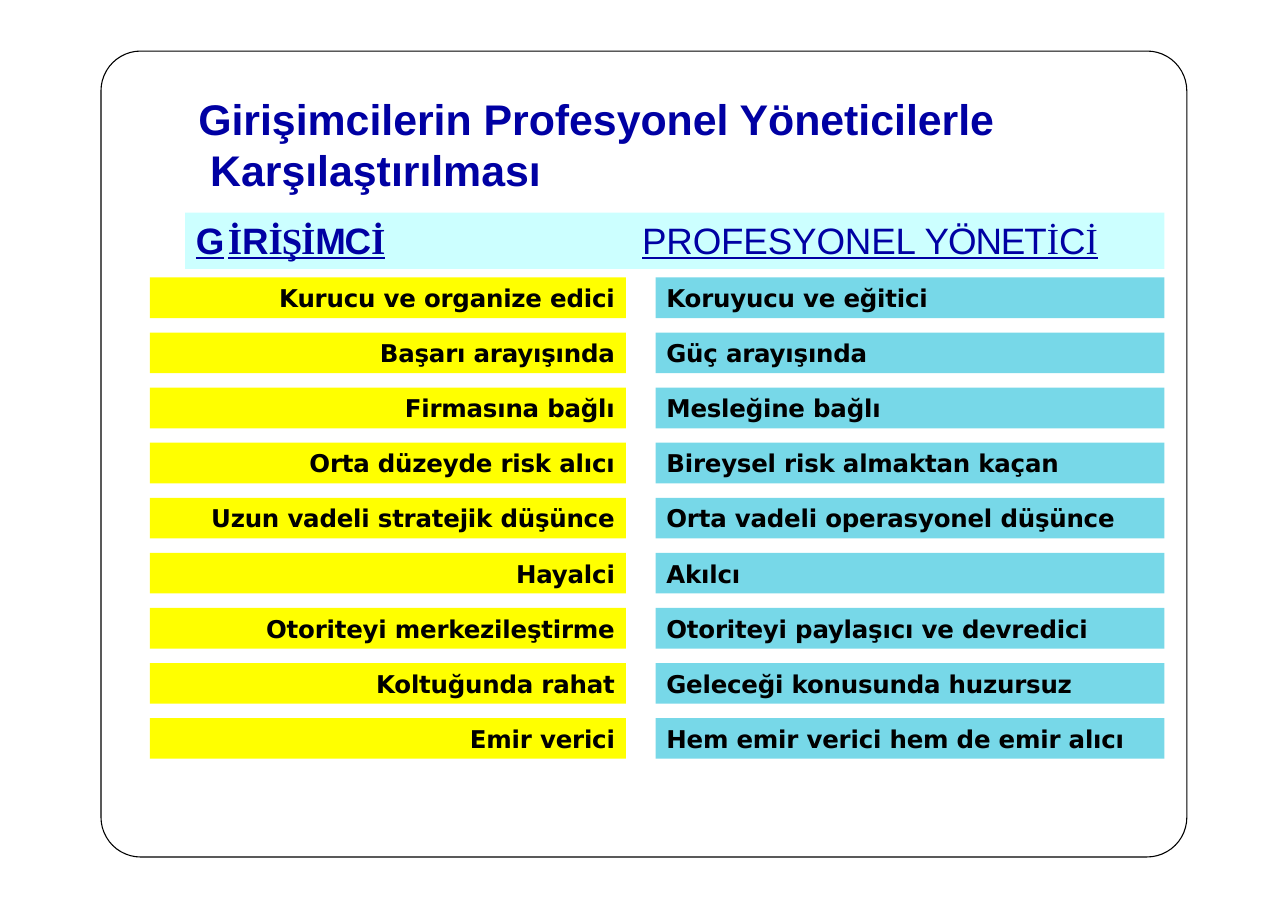
from lxml import etree
from pptx import Presentation
from pptx.dml.color import RGBColor
from pptx.enum.shapes import MSO_SHAPE
from pptx.enum.text import MSO_ANCHOR, MSO_AUTO_SIZE, PP_ALIGN
from pptx.oxml.ns import qn
from pptx.util import Pt

RECTANGLE, ROUNDED = MSO_SHAPE.RECTANGLE, MSO_SHAPE.ROUNDED_RECTANGLE
TOP, MIDDLE = MSO_ANCHOR.TOP, MSO_ANCHOR.MIDDLE
LEFT, RIGHT = PP_ALIGN.LEFT, PP_ALIGN.RIGHT
NO_AUTOFIT = MSO_AUTO_SIZE.NONE

# Content
TITLE = "Girişimcilerin Profesyonel Yöneticilerle\v Karşılaştırılması"
SANS, SERIF, BODY = "Arial", "Times New Roman", "DejaVu Sans"
# Heading runs: text, font, bold, underlined, letter spacing in points
HEADING = [
    ("G", SANS, True, True, 0),
    ("\t", SANS, True, False, 0),
    ("İ", SERIF, True, True, -0.8),
    ("R", SANS, True, True, -0.8),
    ("İŞİ", SERIF, True, True, -0.8),
    ("MC", SANS, True, True, -0.8),
    ("İ", SERIF, True, True, -0.8),
    ("\t", SERIF, True, False, 0),
    ("PROFESYONEL ", SANS, False, True, -0.1),
    ("YÖNET", SANS, False, True, -0.7),
    ("İ", SERIF, False, True, -0.7),
    ("C", SANS, False, True, -0.7),
    ("İ", SERIF, False, True, -0.7),
]
ROWS = [
    ("Kurucu ve organize edici", "Koruyucu ve eğitici"),
    ("Başarı arayışında", "Güç arayışında"),
    ("Firmasına bağlı", "Mesleğine bağlı"),
    ("Orta düzeyde risk alıcı", "Bireysel risk almaktan kaçan"),
    ("Uzun vadeli stratejik düşünce", "Orta vadeli operasyonel düşünce"),
    ("Hayalci", "Akılcı"),
    ("Otoriteyi merkezileştirme", "Otoriteyi paylaşıcı ve devredici"),
    ("Koltuğunda rahat", "Geleceği konusunda huzursuz"),
    ("Emir verici", "Hem emir verici hem de emir alıcı"),
]
COLORS = {"navy": "0000A3", "black": "000000", "white": "FFFFFF",
          "band": "CCFFFF", "yellow": "FFFF00", "blue": "77D8E8"}

# Layout in points
PAGE_WIDTH, PAGE_HEIGHT = 841.68, 595.44
FRAME = (66, 33.4, 709.6, 526.8)
FRAME_RADIUS = 26
TITLE_BOX = (122.4, 54.7, 612, 84.3)
BAND = (121, 139, 640, 36.7)
HEADING_TABS = (20.9, 291.6)
COLUMNS = [(98, 311, "yellow", RIGHT), (428.4, 332.6, "blue", LEFT)]
ROW_TOP, ROW_PITCH, ROW_HEIGHT = 181.4, 36, 26.6
PADDING = 7.2


def color(name):
    return RGBColor.from_string(COLORS[name])


def add_box(page, bounds, fill, kind=RECTANGLE):
    box = page.shapes.add_shape(kind, *map(Pt, bounds))
    box.shadow.inherit = False
    box.fill.solid()
    box.fill.fore_color.rgb = color(fill)
    box.line.fill.background()
    return box


def set_frame(box, anchor, top=0):
    frame = box.text_frame
    frame.word_wrap = True
    frame.auto_size = NO_AUTOFIT
    frame.vertical_anchor = anchor
    frame.margin_left = frame.margin_right = Pt(PADDING)
    frame.margin_top, frame.margin_bottom = Pt(top), 0
    return frame


def format_span(span, font, size, ink, bold=True, underline=False, spacing=0):
    span.font.name, span.font.size = font, Pt(size)
    span.font.bold, span.font.underline = bold, underline
    span.font.color.rgb = color(ink)
    span.font._element.set("spc", str(round(spacing * 100)))


def add_title(page):
    title = page.shapes.title
    title.left, title.top, title.width, title.height = map(Pt, TITLE_BOX)
    frame = set_frame(title, TOP, 5.6)
    frame.text = TITLE
    para = frame.paragraphs[0]
    para.alignment = LEFT
    for span in para.runs:
        format_span(span, SANS, 28, "navy")


def add_heading(page):
    para = set_frame(add_box(page, BAND, "band"), TOP, 3.2).paragraphs[0]
    para.alignment = LEFT
    stops = etree.SubElement(para._p.get_or_add_pPr(), qn("a:tabLst"))
    for position in HEADING_TABS:
        etree.SubElement(stops, qn("a:tab"), pos=str(Pt(position)), algn="l")
    for text, font, bold, underline, spacing in HEADING:
        span = para.add_run()
        span.text = text
        format_span(span, font, 24, "navy", bold, underline, spacing)


def add_rows(page):
    for index, row in enumerate(ROWS):
        top = ROW_TOP + index * ROW_PITCH
        for text, (left, width, fill, alignment) in zip(row, COLUMNS):
            box = add_box(page, (left, top, width, ROW_HEIGHT), fill)
            para = set_frame(box, MIDDLE).paragraphs[0]
            para.text = text
            para.alignment = alignment
            format_span(para.runs[0], BODY, 16, "black", spacing=-0.1)


def main():
    deck = Presentation()
    deck.slide_width, deck.slide_height = Pt(PAGE_WIDTH), Pt(PAGE_HEIGHT)
    page = deck.slides.add_slide(deck.slide_layouts[5])

    # Rounded page frame
    frame = add_box(page, FRAME, "white", ROUNDED)
    frame.adjustments[0] = FRAME_RADIUS / FRAME[3]
    frame.fill.background()
    frame.line.color.rgb = color("black")
    frame.line.width = Pt(0.7)

    # Title, heading band and comparison rows
    add_title(page)
    add_heading(page)
    add_rows(page)
    deck.save("out.pptx")


if __name__ == "__main__":
    main()
